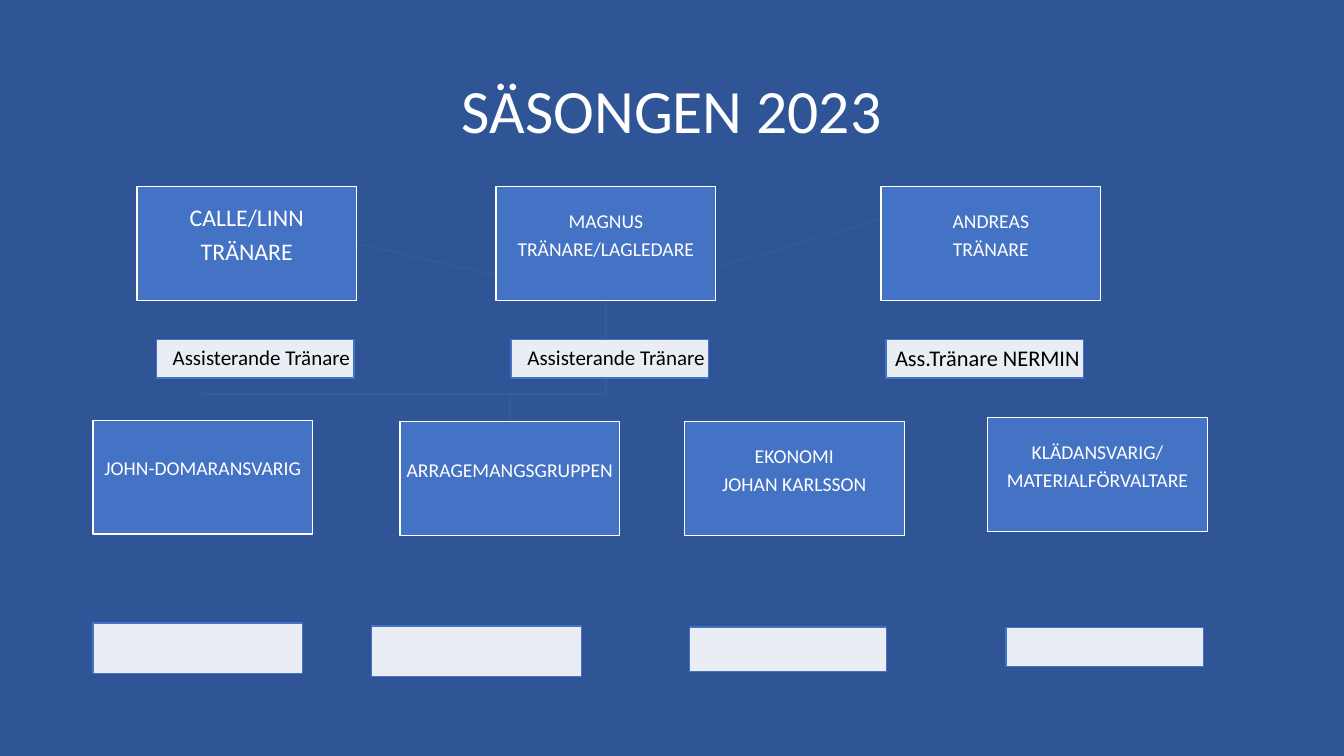
"""Builds the organisation chart slide for the 2023 season."""
from lxml import etree
from pptx import Presentation
from pptx.dml.color import RGBColor
from pptx.enum.shapes import MSO_CONNECTOR, MSO_SHAPE
from pptx.enum.text import MSO_ANCHOR, PP_ALIGN
from pptx.oxml.ns import qn
from pptx.util import Cm, Pt

RECTANGLE = MSO_SHAPE.RECTANGLE
STRAIGHT = MSO_CONNECTOR.STRAIGHT
MIDDLE = MSO_ANCHOR.MIDDLE
CENTER, RIGHT = PP_ALIGN.CENTER, PP_ALIGN.RIGHT
WHITE, BLUE, LINK_BLUE = "FFFFFF", "4472C4", "365B9D"
ROLE_WIDTH, ROLE_HEIGHT = 5.54, 2.87
TOP_ROW, LINK_BEND = 4.7, 9.93


def color(hex_value):
    return RGBColor.from_string(hex_value)


def write(shape, text, size, text_color, align, margins, gap=0.35):
    frame = shape.text_frame
    frame.word_wrap = True
    frame.vertical_anchor = MIDDLE
    frame.margin_left, frame.margin_top, frame.margin_right, frame.margin_bottom = map(Cm, margins)
    frame.text = text
    for paragraph in frame.paragraphs:
        paragraph.alignment = align
        paragraph.line_spacing = 0.9
        paragraph.space_after = Pt(gap * size)
        paragraph.font.size = Pt(size)
        paragraph.font.name = "Calibri"
        paragraph.font.color.rgb = color(text_color)


prs = Presentation()
prs.slide_width, prs.slide_height = Cm(33.87), Cm(19.05)
slide = prs.slides.add_slide(prs.slide_layouts[6])
slide.background.fill.solid()
slide.background.fill.fore_color.rgb = color("2F5597")
shapes = slide.shapes

title = shapes.add_textbox(Cm(2.33), Cm(1.01), Cm(29.21), Cm(3.68))
write(title, "SÄSONGEN 2023", 44, WHITE, CENTER, (0.25, 0.13, 0.25, 0.13), 0)

roles = [
    (3.45, TOP_ROW, "CALLE/LINN\nTRÄNARE", 17),
    (12.5, TOP_ROW, "MAGNUS\nTRÄNARE/LAGLEDARE", 14),
    (22.2, TOP_ROW, "ANDREAS\nTRÄNARE", 14),
    (2.34, 10.59, "JOHN-DOMARANSVARIG", 14),
    (10.08, 10.62, "ARRAGEMANGSGRUPPEN", 14),
    (17.25, 10.62, "EKONOMI\nJOHAN KARLSSON", 14),
    (24.89, 10.52, "KLÄDANSVARIG/\nMATERIALFÖRVALTARE", 14),
]
leader_x, leader_bottom = roles[1][0] + ROLE_WIDTH / 2, TOP_ROW + ROLE_HEIGHT

coach_links = []
for _ in range(2):
    link = shapes.add_connector(STRAIGHT, 0, 0, 0, 0)
    link.line.color.rgb = color(LINK_BLUE)
    link.line.width = Pt(1)
    etree.SubElement(link._element.spPr, qn("a:effectLst"))
    coach_links.append(link)

for left, top, _, _ in roles[3:5]:
    role_x = left + ROLE_WIDTH / 2
    builder = shapes.build_freeform(Cm(leader_x), Cm(leader_bottom))
    corners = [(leader_x, LINK_BEND), (role_x, LINK_BEND), (role_x, top)]
    builder.add_line_segments([(Cm(x), Cm(y)) for x, y in corners], close=False)
    branch = builder.convert_to_shape()
    branch.shadow.inherit = False
    branch.fill.background()
    branch.line.color.rgb = color(LINK_BLUE)
    branch.line.width = Pt(1)

role_boxes = []
for left, top, text, size in roles:
    role = shapes.add_shape(RECTANGLE, Cm(left), Cm(top), Cm(ROLE_WIDTH), Cm(ROLE_HEIGHT))
    role.shadow.inherit = False
    role.fill.solid()
    role.fill.fore_color.rgb = color(BLUE)
    role.line.color.rgb = color(WHITE)
    role.line.width = Pt(1)
    write(role, text, size, WHITE, CENTER, (0.03, 0.03, 0.03, 0.41))
    role_boxes.append(role)

calle, magnus, andreas = role_boxes[:3]
for link, coach, side in zip(coach_links, (calle, andreas), (3, 0)):
    link.begin_connect(magnus, 2)
    link.end_connect(coach, side)

labels = [
    (3.94, 8.56, 4.98, 0.97, "Assisterande Tränare", 15),
    (12.88, 8.56, 4.98, 0.97, "Assisterande Tränare", 15),
    (22.33, 8.56, 4.98, 0.97, "Ass.Tränare NERMIN", 16),
    (2.34, 15.7, 5.28, 1.27, "", 15),
    (9.37, 15.78, 5.28, 1.27, "", 15),
    (17.37, 15.8, 4.98, 1.12, "", 15),
    (25.35, 15.82, 4.98, 0.97, "", 15),
]
for left, top, width, height, text, size in labels:
    label = shapes.add_shape(RECTANGLE, Cm(left), Cm(top), Cm(width), Cm(height))
    label.shadow.inherit = False
    label.fill.solid()
    label.fill.fore_color.rgb = color(WHITE)
    white_fill = label._element.spPr.find(qn("a:solidFill"))[0]
    etree.SubElement(white_fill, qn("a:alpha"), val="90000")
    label.line.color.rgb = color(BLUE)
    label.line.width = Pt(1)
    if text:
        write(label, text, size, "000000", RIGHT, (0.1, 0.03, 0.1, 0.03))

prs.save("out.pptx")
